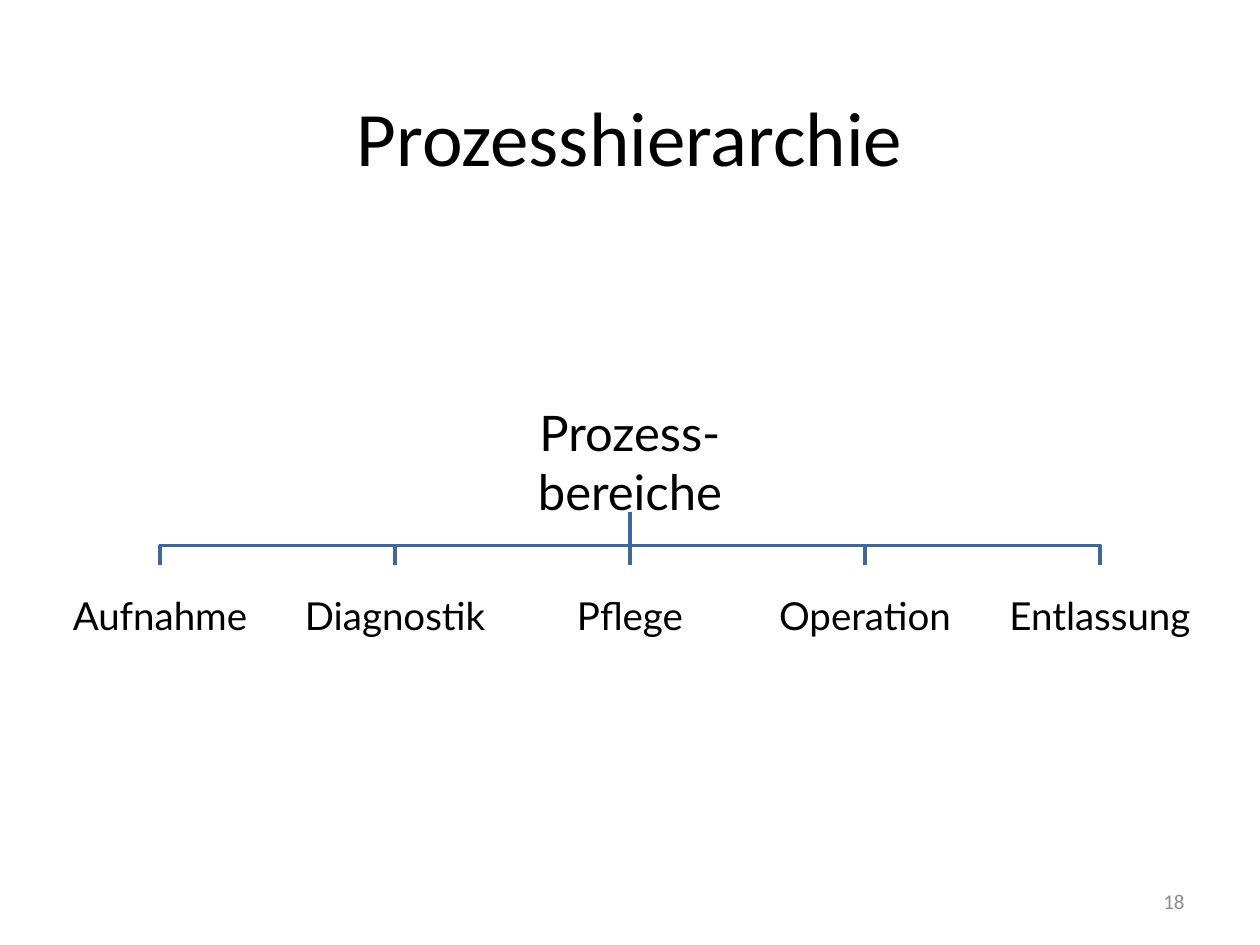
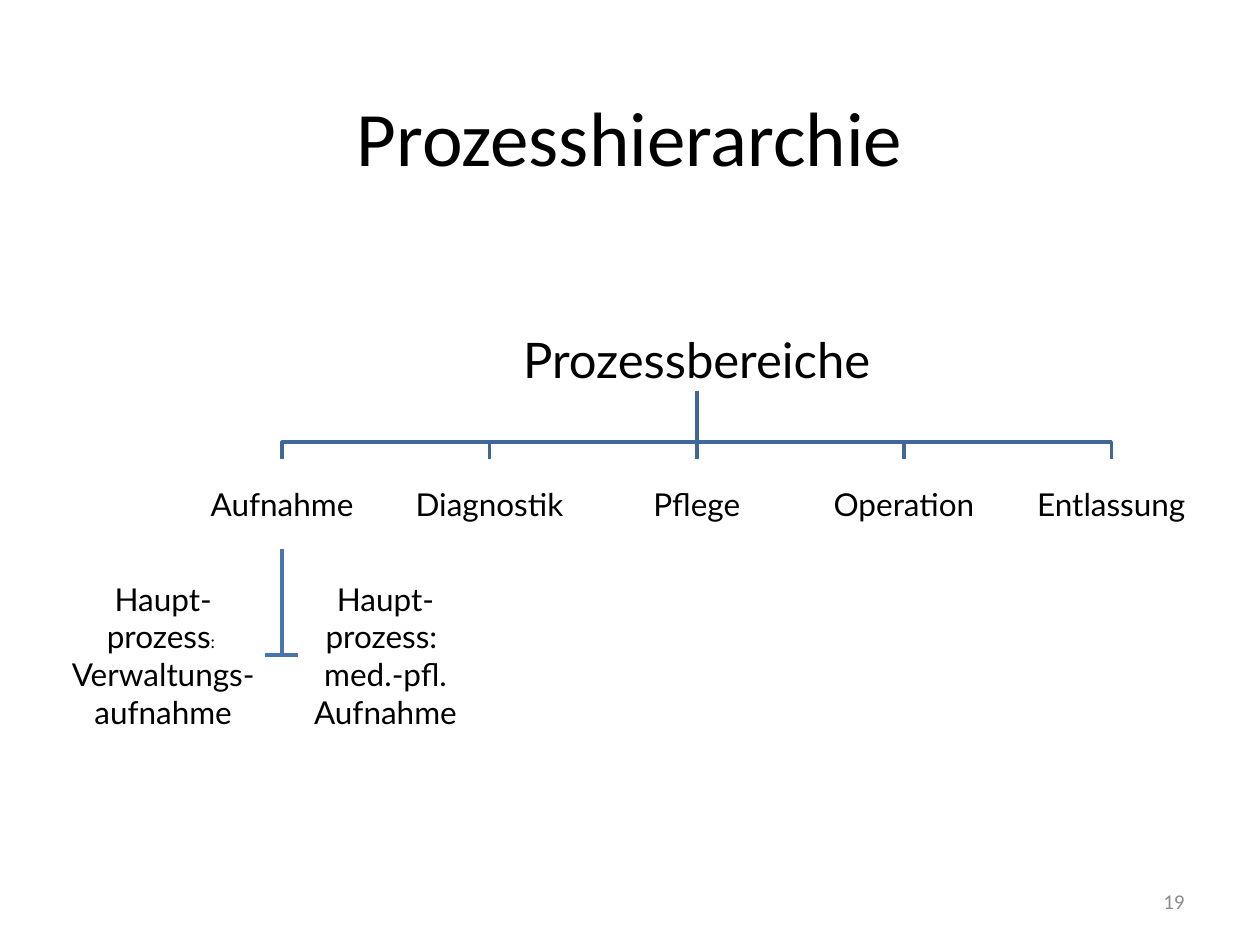
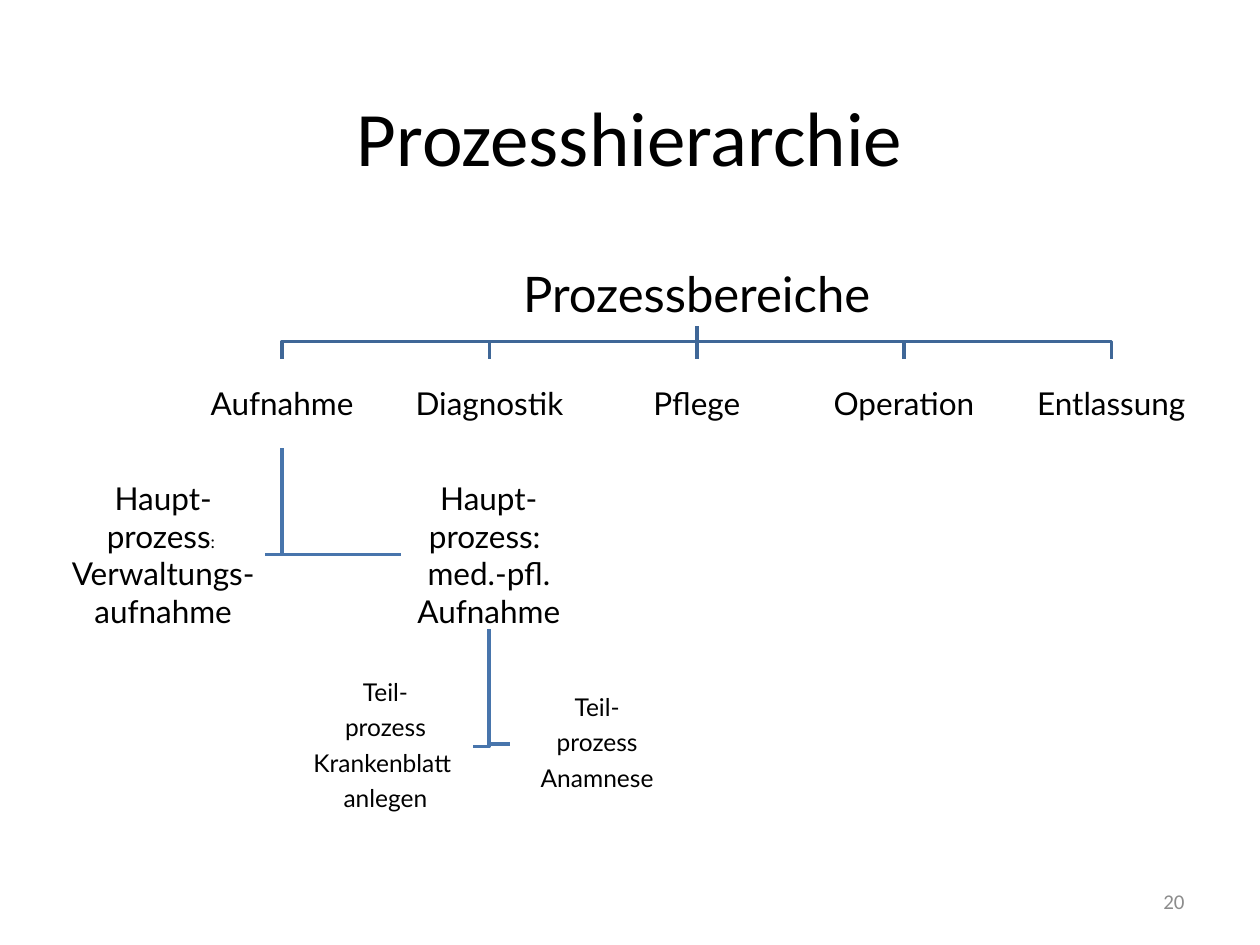
from pptx import Presentation
from pptx import util as u
from pptx.dml.color import RGBColor
from pptx.enum import shapes, text
from lxml import etree

Inches = u.Inches

# Shared look
BLACK, WHITE, GREY = "000000", "FFFFFF", "8C8C8C"
AREA_LINE, PROCESS_LINE = "3F6797", "4875AC"
TITLE_FONT, TREE_FONT = "Calibri", "Lato"
RIGHT_EDGE = 9.5
BOX_HEIGHT = 1.16
BOX_WIDTH = 1.36
AREAS = ["Aufnahme", "Diagnostik", "Pflege", "Operation", "Entlassung"]
ADMIN = ["Haupt-", [("prozess", 18), (": ", 10)], "Verwaltungs-aufnahme"]
MEDICAL = ["Haupt-", "prozess: ", "med.-pfl. Aufnahme"]
RECORD = ["Teil-", "prozess", "Krankenblatt ", "anlegen"]
ANAMNESIS = ["Teil-", "prozess", "Anamnese"]


def color(hex_code):
    return RGBColor.from_string(hex_code)


def style_line(line, hex_code):
    line.color.rgb = color(hex_code)
    line.width = u.Pt(2)


def write(frame, lines, size, font=TREE_FONT, hex_code=BLACK,
          align=text.PP_ALIGN.CENTER):
    """Fill a frame; a line is a string or a list of (words, size) spans."""
    frame.word_wrap = True
    frame.vertical_anchor = text.MSO_ANCHOR.MIDDLE
    for index, line in enumerate(lines):
        para = frame.paragraphs[0] if index == 0 else frame.add_paragraph()
        para.alignment = align
        para.font.name = font
        para.font.size = u.Pt(size)
        para.font.color.rgb = color(hex_code)
        spans = [(line, None)] if isinstance(line, str) else line
        for words, span_size in spans:
            span = para.add_run()
            span.text = words
            if span_size:
                span.font.size = u.Pt(span_size)


def add_label(page, words, left, top, width, height, size, **style):
    label = page.shapes.add_textbox(*map(Inches, (left, top, width, height)))
    write(label.text_frame, [words], size, TITLE_FONT, **style)


def add_box(page, lines, left, top, width, height, size, inset=0.01):
    box = page.shapes.add_shape(shapes.MSO_SHAPE.RECTANGLE,
                                *map(Inches, (left, top, width, height)))
    box.shadow.inherit = False
    box.fill.background()
    style_line(box.line, WHITE)
    frame = box.text_frame
    frame.margin_left = frame.margin_right = Inches(inset)
    frame.margin_top = frame.margin_bottom = Inches(inset)
    write(frame, lines, size)
    return box


def add_part_box(page, lines, left, top):
    box = add_box(page, lines, left, top, BOX_WIDTH, 1.31, 14)
    for para in box.text_frame.paragraphs:
        para.line_spacing = 0.9
        para.space_after = u.Pt(4.9)
    return box


# Links between boxes, placed behind the root box
def center_x(box):
    return box.left + box.width // 2


def add_bend(page, root, points, hex_code):
    builder = page.shapes.build_freeform(*points[0], scale=1.0)
    builder.add_line_segments(points[1:], close=False)
    bend = builder.convert_to_shape()
    bend.shadow.inherit = False
    bend.fill.background()
    style_line(bend.line, hex_code)
    root.element.addprevious(bend.element)


def link_down(page, root, child):
    bar = child.top - int(child.width * 0.11)
    add_bend(page, root, [(center_x(root), root.top + root.height),
                          (center_x(root), bar), (center_x(child), bar),
                          (center_x(child), child.top)], AREA_LINE)


def link_straight(page, root, child):
    link = page.shapes.add_connector(shapes.MSO_CONNECTOR.STRAIGHT, 0, 0, 0, 0)
    link.begin_connect(root, 2)
    link.end_connect(child, 0)
    style_line(link.line, AREA_LINE)
    properties = link.element.spPr
    etree.SubElement(properties, "{%s}effectLst" % properties.nsmap["a"])
    root.element.addprevious(link.element)


def link_side(page, root, parent, child):
    x, middle = center_x(parent), child.top + child.height // 2
    side = child.left if child.left > x else child.left + child.width
    add_bend(page, root, [(x, parent.top + parent.height), (x, middle),
                          (side, middle)], PROCESS_LINE)


# Slide parts
def add_page(deck, number):
    page = deck.slides.add_slide(deck.slide_layouts[6])
    add_label(page, "Prozesshierarchie", 0.5, 0.32, 9, 1.51, 44)
    add_label(page, str(number), 7.17, 6.95, 2.33, 0.4, 12,
              hex_code=GREY, align=text.PP_ALIGN.RIGHT)
    return page


def add_area_tree(page, heading, root_size, root_top, left, top, width, size, inset):
    """Root box centred above one evenly spaced row of areas."""
    root_width, root_height = root_size
    pitch = (RIGHT_EDGE - width - left) / (len(AREAS) - 1)
    middle = (left + RIGHT_EDGE) / 2
    root = add_box(page, heading, middle - root_width / 2, root_top,
                   root_width, root_height, 28, 0.02)
    areas = [add_box(page, [name], left + i * pitch, top, width, width / 2, size, inset)
             for i, name in enumerate(AREAS)]
    for area in areas:
        if area is areas[len(areas) // 2]:
            link_straight(page, root, area)
        else:
            link_down(page, root, area)
    return root, areas


def add_process_tree(page, root_top, top, medical_left):
    """Area tree with the two main processes below admission."""
    root, areas = add_area_tree(page, ["Prozessbereiche"], (4.66, 0.49), root_top,
                                1.56, top, BOX_WIDTH, 18, 0.01)
    process_top = top + 0.96
    admin = add_box(page, ADMIN, 0.5, process_top, 1.59, BOX_HEIGHT, 18)
    medical = add_box(page, MEDICAL, medical_left, process_top,
                      BOX_WIDTH, BOX_HEIGHT, 18)
    for process in (medical, admin):
        link_side(page, root, areas[0], process)
    return root, medical


def main():
    deck = Presentation()
    deck.slide_width, deck.slide_height = Inches(10), Inches(7.5)

    # Process areas
    page = add_page(deck, 18)
    add_area_tree(page, ["Prozess-", "bereiche"], (1.54, 0.77), 3.28,
                  0.5, 4.5, 1.54, 22, 0.02)

    # Main processes
    add_process_tree(add_page(deck, 19), 2.6, 3.66, 2.38)

    # Subprocesses
    page = add_page(deck, 20)
    root, medical = add_process_tree(page, 2.08, 2.86, 3.2)
    for lines, left, top in ((RECORD, 2.38, 5.27), (ANAMNESIS, 4.06, 5.25)):
        link_side(page, root, medical, add_part_box(page, lines, left, top))

    deck.save("out.pptx")


if __name__ == "__main__":
    main()
